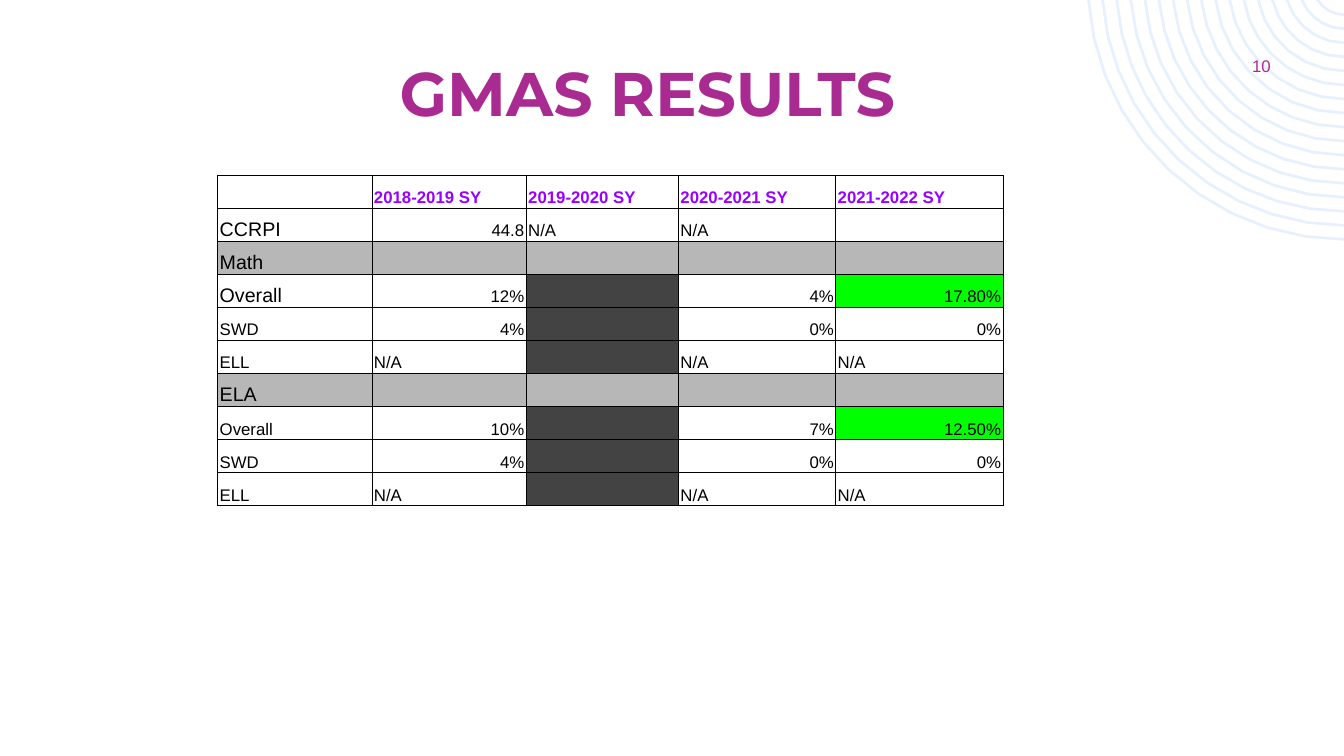
import math
import pptx
import pptx.util
import pptx.dml.color
import pptx.enum.text
import pptx.oxml
import pptx.oxml.ns

RGB = pptx.dml.color.RGBColor
MAGENTA = RGB(0xA9, 0x2A, 0x91)
VIOLET = RGB(0x99, 0x00, 0xFF)
PALE_BLUE = RGB(0xE6, 0xF0, 0xFE)
BLACK = RGB(0, 0, 0)
WHITE = RGB(0xFF, 0xFF, 0xFF)
SUBJECT_GRAY = RGB(0xB7, 0xB7, 0xB7)
UNTESTED_GRAY = RGB(0x43, 0x43, 0x43)
GAIN_GREEN = RGB(0, 0xFF, 0)

SLIDE_WIDTH = pptx.util.Inches(13.33)
SLIDE_HEIGHT = pptx.util.Inches(7.5)
ALIGN = pptx.enum.text.PP_ALIGN
ANCHOR = pptx.enum.text.MSO_ANCHOR

YEAR_SHARES = [11.48, 11.48, 11.33, 11.7, 12.45]
ROW_SHARE = 4.37
UNTESTED_YEAR = 2
SUBJECTS = ("Math", "ELA")
GAINS = ("17.80%", "12.50%")
LARGE_LABEL_ROWS = (1, 2, 3, 6)
RESULTS = [
    ["", "2018-2019 SY", "2019-2020 SY", "2020-2021 SY", "2021-2022 SY"],
    ["CCRPI", "44.8", "N/A", "N/A", ""],
    ["Math", "", "", "", ""],
    ["Overall", "12%", "", "4%", "17.80%"],
    ["SWD", "4%", "", "0%", "0%"],
    ["ELL", "N/A", "", "N/A", "N/A"],
    ["ELA", "", "", "", ""],
    ["Overall", "10%", "", "7%", "12.50%"],
    ["SWD", "4%", "", "0%", "0%"],
    ["ELL", "N/A", "", "N/A", "N/A"],
]


def across(percent):
    return round(SLIDE_WIDTH * percent / 100)


def down(percent):
    return round(SLIDE_HEIGHT * percent / 100)


def add_run(paragraph, text, font_name, size, color, bold=False):
    run = paragraph.add_run()
    run.text = text
    run.font.name = font_name
    run.font.size = pptx.util.Pt(size)
    run.font.color.rgb = color
    run.font.bold = bold


def add_label(slide, left, top, width, height, text, font_name, size, bold=False):
    label = slide.shapes.add_textbox(across(left), down(top), across(width), down(height))
    frame = label.text_frame
    frame.word_wrap = True
    frame.vertical_anchor = ANCHOR.MIDDLE
    frame.paragraphs[0].alignment = ALIGN.CENTER
    add_run(frame.paragraphs[0], text, font_name, size, MAGENTA, bold)


def arc_points(radius, center_x, center_y):
    steps = math.ceil(2.2 * math.sqrt(radius))
    start = math.asin(-center_y / radius)
    end = math.acos((center_x - 100) / radius)
    angles = [start + (end - start) * step / steps for step in range(steps + 1)]
    return [
        (across(center_x - radius * math.cos(angle)), across(center_y + radius * math.sin(angle)))
        for angle in angles
    ]


def add_ripples(slide, center_x, center_y, outermost, innermost, thickness, count):
    builder = None
    for ring in range(count):
        radius = outermost - (outermost - innermost) * ring / (count - 1)
        outer = arc_points(radius, center_x, center_y)
        inner = arc_points(radius - thickness, center_x, center_y)
        if builder is None:
            builder = slide.shapes.build_freeform(*outer[0])
        else:
            builder.move_to(*outer[0])
        builder.add_line_segments(outer[1:] + inner[::-1], close=True)
    ripples = builder.convert_to_shape()
    ripples.shadow.inherit = False
    ripples.fill.solid()
    ripples.fill.fore_color.rgb = PALE_BLUE
    ripples.line.fill.background()


def add_borders(cell):
    properties = cell._tc.get_or_add_tcPr()
    for side in ("lnL", "lnR", "lnT", "lnB"):
        properties.append(pptx.oxml.parse_xml(
            f'<a:{side} {pptx.oxml.ns.nsdecls("a")} w="6350"><a:solidFill>'
            f'<a:srgbClr val="{BLACK}"/></a:solidFill></a:{side}>'
        ))


def cell_fill(row, column):
    if RESULTS[row][0] in SUBJECTS:
        return SUBJECT_GRAY
    if column == UNTESTED_YEAR and row > 2:
        return UNTESTED_GRAY
    return GAIN_GREEN if RESULTS[row][column] in GAINS else WHITE


def fill_cell(cell, row, column):
    text = RESULTS[row][column]
    cell.margin_left = cell.margin_right = pptx.util.Inches(0.02)
    cell.margin_top = cell.margin_bottom = pptx.util.Inches(0.01)
    cell.vertical_anchor = ANCHOR.BOTTOM
    add_borders(cell)
    cell.fill.solid()
    cell.fill.fore_color.rgb = cell_fill(row, column)
    paragraph = cell.text_frame.paragraphs[0]
    is_score = row > 0 and text[:1].isdigit()
    paragraph.alignment = ALIGN.RIGHT if is_score else ALIGN.LEFT
    if text:
        size = 14 if column == 0 and row in LARGE_LABEL_ROWS else 12
        add_run(paragraph, text, "Arial", size, BLACK if row else VIOLET, row == 0)
    else:
        paragraph.font.size = pptx.util.Pt(12)


def add_results(slide, left, top):
    table = slide.shapes.add_table(
        len(RESULTS), len(YEAR_SHARES), across(left), down(top),
        across(sum(YEAR_SHARES)), down(ROW_SHARE * len(RESULTS)),
    ).table
    table.first_row = False
    table.horz_banding = False
    for column, share in enumerate(YEAR_SHARES):
        table.columns[column].width = across(share)
    for row in range(len(RESULTS)):
        table.rows[row].height = down(ROW_SHARE)
        for column in range(len(YEAR_SHARES)):
            fill_cell(table.cell(row, column), row, column)


def main():
    deck = pptx.Presentation()
    deck.slide_width = SLIDE_WIDTH
    deck.slide_height = SLIDE_HEIGHT
    slide = deck.slides.add_slide(deck.slide_layouts[6])
    slide.background.fill.solid()
    slide.background.fill.fore_color.rgb = WHITE
    add_ripples(slide, 100.05, -1.28, 19.2, 2.48, 0.2, 17)
    add_label(slide, 89.8, 6.67, 8.1, 4, "10", "Arial", 12)
    add_label(slide, 4.4, 6.6, 87.55, 11.2, "GMAS RESULTS", "Montserrat", 44, True)
    add_results(slide, 16.2, 23.2)
    deck.save("out.pptx")


if __name__ == "__main__":
    main()
